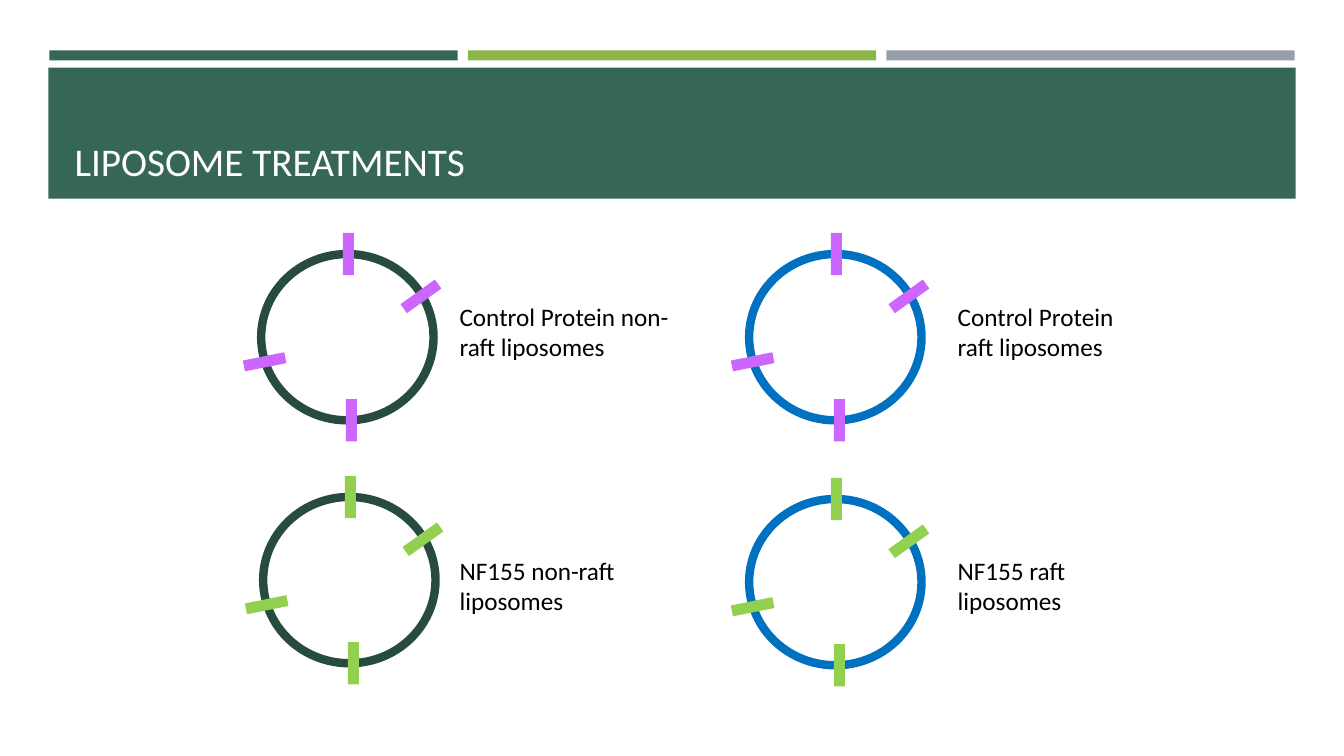
import pptx
import pptx.dml.color
import pptx.enum.shapes
import pptx.enum.text
import pptx.util
from pptx.util import Inches

TITLE_ONLY_LAYOUT = 5
DARK_GREEN = "284B41"
BLUE = "0070C0"
PURPLE = "CC66FF"
LIGHT_GREEN = "92D050"

# Left, top, rotation of each protein, measured from the membrane's corner
PROTEINS = [(0.81, -0.21, 0), (-0.02, 0.86, 78.7), (0.84, 1.44, 0), (1.53, 0.21, 54.4)]


def color(hex_string):
    return pptx.dml.color.RGBColor.from_string(hex_string)


class SlideBuilder:
    """Holds the text style and the slide being filled."""

    font_name = "Calibri"

    def __init__(self, slide):
        self.slide = slide

    def format_text(self, text_frame, size, text_color):
        text_frame.word_wrap = True
        for paragraph in text_frame.paragraphs:
            paragraph.alignment = pptx.enum.text.PP_ALIGN.LEFT
            for run in paragraph.runs:
                run.font.name = self.font_name
                run.font.size = pptx.util.Pt(size)
                run.font.color.rgb = color(text_color)

    def title(self, text, left, top, width, height):
        title = self.slide.shapes.title
        title.left, title.top = Inches(left), Inches(top)
        title.width, title.height = Inches(width), Inches(height)
        title.text_frame.text = text
        title.text_frame.vertical_anchor = pptx.enum.text.MSO_ANCHOR.BOTTOM
        self.format_text(title.text_frame, 28, "FFFFFF")
        # Bring the title in front of its band
        self.slide.shapes.element.append(title.element)

    def shape(self, kind, left, top, width, height):
        shape = self.slide.shapes.add_shape(
            kind, Inches(left), Inches(top), Inches(width), Inches(height))
        shape.shadow.inherit = False
        return shape

    def bar(self, left, top, width, height, fill, rotation=0):
        bar = self.shape(pptx.enum.shapes.MSO_SHAPE.RECTANGLE, left, top, width, height)
        bar.fill.solid()
        bar.fill.fore_color.rgb = color(fill)
        bar.line.fill.background()
        bar.rotation = rotation

    def ring(self, left, top, width, height, line_color):
        ring = self.shape(pptx.enum.shapes.MSO_SHAPE.OVAL, left, top, width, height)
        ring.fill.background()
        ring.line.color.rgb = color(line_color)
        ring.line.width = pptx.util.Pt(6)

    def label(self, text, left, top, width, height):
        box = self.slide.shapes.add_textbox(
            Inches(left), Inches(top), Inches(width), Inches(height))
        box.text_frame.text = text
        box.text_frame.auto_size = pptx.enum.text.MSO_AUTO_SIZE.SHAPE_TO_FIT_TEXT
        self.format_text(box.text_frame, 18, "000000")

    def liposome(self, left, top, membrane_color, protein_color):
        """Draw a membrane ring with its four embedded proteins."""
        self.ring(left, top, 1.71, 1.65, membrane_color)
        for dx, dy, rotation in PROTEINS:
            self.bar(left + dx, top + dy, 0.11, 0.42, protein_color, rotation)


def main():
    presentation = pptx.Presentation()
    presentation.slide_width = Inches(13.33)
    presentation.slide_height = Inches(7.5)
    layout = presentation.slide_layouts[TITLE_ONLY_LAYOUT]
    builder = SlideBuilder(presentation.slides.add_slide(layout))

    for column, fill in enumerate(["366658", "8CB64A", "969FA7"]):
        builder.bar(0.49 + 4.15 * column, 0.5, 4.05, 0.1, fill)
    builder.bar(0.48, 0.67, 12.37, 1.3, "366658")
    builder.title("LIPOSOME TREATMENTS", 0.64, 0.77, 12.06, 1.11)

    liposomes = [
        (2.59, 2.52, DARK_GREEN, PURPLE),
        (7.43, 2.52, BLUE, PURPLE),
        (2.61, 4.93, DARK_GREEN, LIGHT_GREEN),
        (7.43, 4.95, BLUE, LIGHT_GREEN),
    ]
    for liposome in liposomes:
        builder.liposome(*liposome)

    labels = [
        ("Control Protein non-raft liposomes", 4.46, 2.94, 2.27),
        ("Control Protein raft liposomes", 9.4, 2.94, 2.1),
        ("NF155 non-raft liposomes", 4.46, 5.46, 2.27),
        ("NF155 raft liposomes", 9.4, 5.46, 2.27),
    ]
    for text, left, top, width in labels:
        builder.label(text, left, top, width, 0.71)

    presentation.save("out.pptx")


if __name__ == "__main__":
    main()
